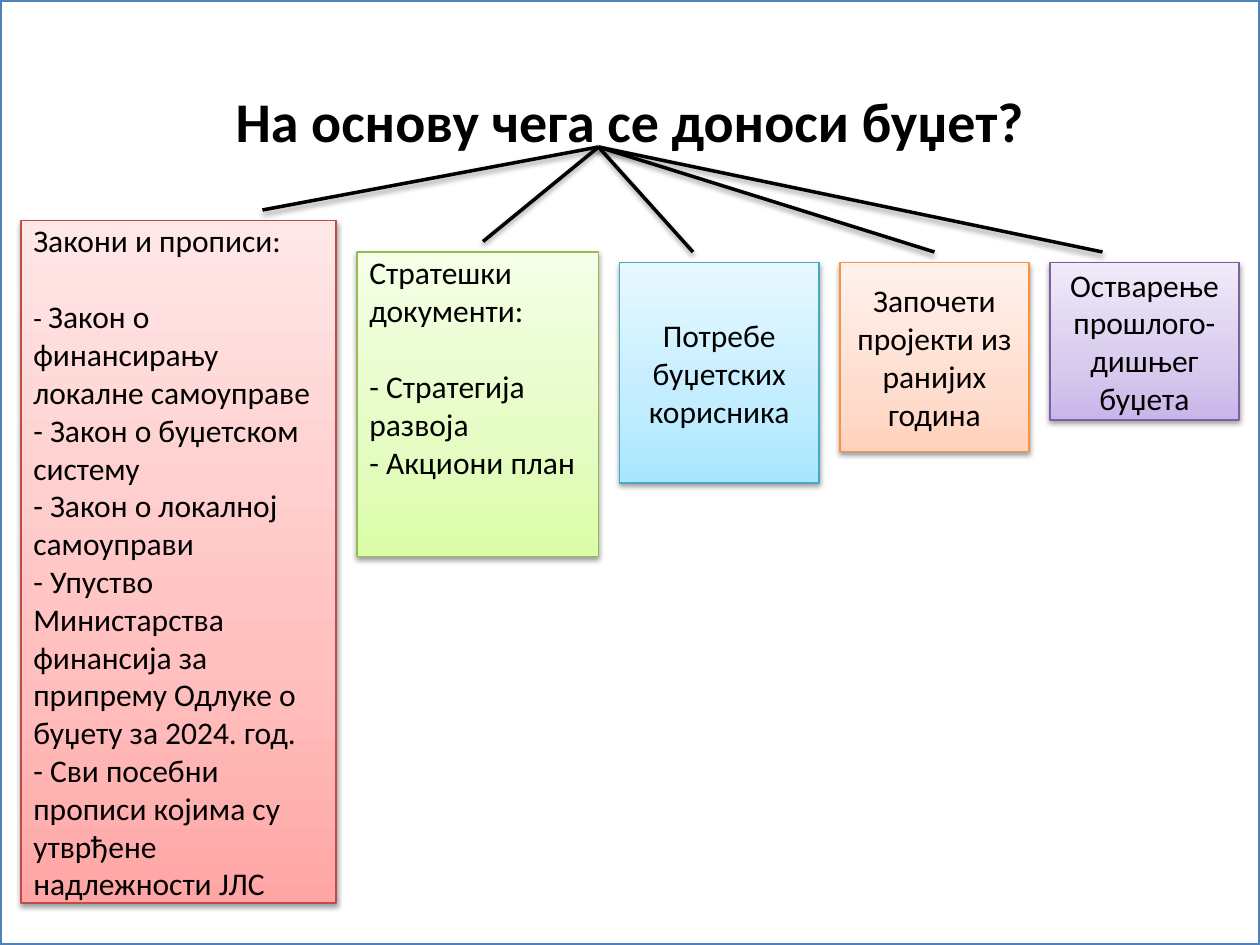
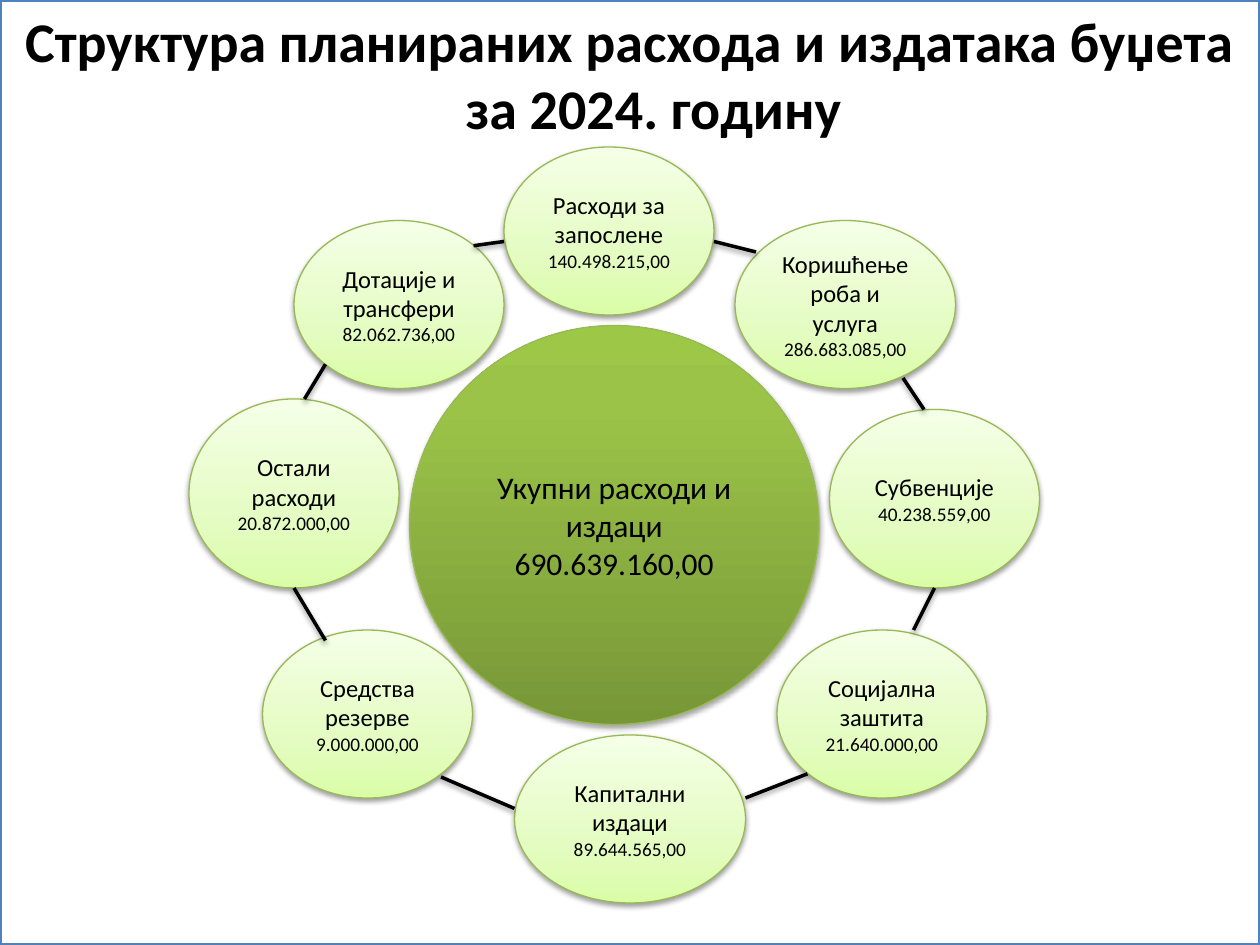
from dataclasses import dataclass

from lxml import etree
from pptx import Presentation
from pptx.dml.color import RGBColor
from pptx.enum.shapes import MSO_CONNECTOR, MSO_SHAPE
from pptx.enum.text import MSO_ANCHOR, PP_ALIGN
from pptx.oxml.ns import qn
from pptx.util import Emu, Pt

EMU_PER_PX = 7620  # 120 px to the inch
PAGE_WIDTH, PAGE_HEIGHT = 1200, 900
FONT = "Calibri"
RECTANGLE, ELLIPSE = MSO_SHAPE.RECTANGLE, MSO_SHAPE.OVAL
STRAIGHT = MSO_CONNECTOR.STRAIGHT
LEFT, CENTER = PP_ALIGN.LEFT, PP_ALIGN.CENTER
TOP, MIDDLE = MSO_ANCHOR.TOP, MSO_ANCHOR.MIDDLE

COLORS = {
    "paper": "FFFFFF", "ink": "000000", "frame": "4F81BD",
    "red": "BF4C48", "green": "98B955", "aqua": "46AAC5",
    "orange": "F69240", "purple": "7D60A0",
}
# Gradient stops from bottom to top: percent and colour
GRADIENTS = {
    "red": ((0, "FFA6A5"), (35, "FFC0BF"), (100, "FFE7E7")),
    "green": ((0, "DAFDA7"), (35, "E4FCC2"), (100, "F5FFE7")),
    "aqua": ((0, "A7E6FF"), (35, "C1EDFF"), (100, "E7F8FF")),
    "orange": ((0, "FFD2BD"), (35, "FFDED0"), (100, "FFF2ED")),
    "purple": ((0, "C9B5E8"), (35, "D8CBEE"), (100, "F0EAF9")),
    "total": ((0, "779737"), (80, "9BC348"), (100, "9DC746")),
}


@dataclass(frozen=True)
class Span:
    text: str
    size: int = 18


@dataclass(frozen=True)
class Area:
    left: int
    top: int
    width: int
    height: int


@dataclass(frozen=True)
class Source:
    """A basis of the budget: a heading, and items listed below it."""
    color: str
    top: int
    width: int
    height: int
    heading: str
    items: tuple[tuple[Span, ...], ...] = ()
    anchor: MSO_ANCHOR = MIDDLE
    inset_top: int = 6


@dataclass(frozen=True)
class Expense:
    area: Area
    name: str
    amount: str


@dataclass(frozen=True)
class Link:
    x1: int
    y1: int
    x2: int
    y2: int


SOURCES = (
    Source("red", 210, 300, 650, "Закони и прописи:", (
        (Span("- ", 16), Span("Закон о финансирању локалне самоуправе")),
        (Span("- Закон о буџетском систему"),),
        (Span("- Закон о локалној самоуправи"),),
        (Span("- Упуство Министарства финансија за припрему Одлуке о буџету за 2024. год."),),
        (Span("- Сви посебни прописи којима су утврђене надлежности ЈЛС"),),
    )),
    Source("green", 240, 230, 290, "Стратешки документи:", (
        (Span("- Стратегија развоја"),),
        (Span("- Акциони план"),),
    ), TOP, 1),
    Source("aqua", 250, 190, 210, "Потребе буџетских корисника"),
    Source("orange", 250, 180, 180, "Започети пројекти из ранијих година"),
    Source("purple", 250, 180, 150, "Остварење прошлого-дишњег буџета"),
)
SOURCE_GAP = 20
SOURCE_LINK_START = (570, 140)
SOURCE_LINK_ENDS = ((250, 200), (460, 230), (660, 240), (890, 240), (1050, 240))

TOTAL_AREA = Area(390, 310, 390, 380)
EXPENSES = (
    Expense(Area(480, 140, 200, 160), "Расходи за запослене", "140.498.215,00"),
    Expense(Area(700, 210, 210, 160), "Коришћење роба и услуга", "286.683.085,00"),
    Expense(Area(790, 390, 200, 170), "Субвенције", "40.238.559,00"),
    Expense(Area(740, 600, 200, 160), "Социјална заштита", "21.640.000,00"),
    Expense(Area(490, 700, 220, 160), "Капитални издаци", "89.644.565,00"),
    Expense(Area(280, 210, 200, 160), "Дотације и трансфери", "82.062.736,00"),
    Expense(Area(180, 380, 200, 180), "Остали расходи", "20.872.000,00"),
    Expense(Area(250, 600, 200, 160), "Средства резерве", "9.000.000,00"),
)
EXPENSE_LINKS = (
    Link(451, 234, 480, 230), Link(680, 230, 720, 240),
    Link(860, 360, 880, 390), Link(890, 560, 870, 600),
    Link(769, 737, 710, 760), Link(420, 740, 490, 770),
    Link(280, 560, 310, 610), Link(310, 347, 290, 380),
)


def px(length: int) -> Emu:
    return Emu(length * EMU_PER_PX)


def rgb(name: str) -> RGBColor:
    return RGBColor.from_string(COLORS[name])


def add_color(parent, value: str):
    return etree.SubElement(parent, qn("a:srgbClr"), val=value)


def fill_gradient(shape, stops) -> None:
    shape.fill.gradient()
    shape.fill.gradient_angle = 90
    stop_list = shape.element.spPr.find(qn("a:gradFill")).find(qn("a:gsLst"))
    for stop in list(stop_list):
        stop_list.remove(stop)
    for percent, value in stops:
        stop = etree.SubElement(stop_list, qn("a:gs"), pos=str(percent * 1000))
        add_color(stop, value)


def drop_shadow(shape, alpha: int = 38, distance: int = 20000) -> None:
    """Cast a soft shadow downwards; call it once the line is set."""
    properties = shape.element.spPr
    effects = properties.find(qn("a:effectLst"))
    if effects is None:
        effects = etree.SubElement(properties, qn("a:effectLst"))
    shadow = etree.SubElement(effects, qn("a:outerShdw"), blurRad="40000",
                              dist=str(distance), dir="5400000", rotWithShape="0")
    color = add_color(shadow, COLORS["ink"])
    etree.SubElement(color, qn("a:alpha"), val=str(alpha * 1000))


def write_text(shape, lines, *, align=CENTER, anchor=MIDDLE, bold=False,
               inset_top=6, gap_after_first=0) -> None:
    frame = shape.text_frame
    frame.word_wrap = True
    frame.vertical_anchor = anchor
    frame.margin_top = px(inset_top)
    for index, spans in enumerate(lines):
        para = frame.add_paragraph() if index else frame.paragraphs[0]
        para.alignment = align
        if index == 1 and gap_after_first:
            para.space_before = Pt(gap_after_first)
        for span in spans:
            run = para.add_run()
            run.text = span.text
            run.font.name = FONT
            run.font.size = Pt(span.size)
            run.font.bold = bold
            run.font.color.rgb = rgb("ink")


def add_box(page, kind, area: Area, line: str, line_width: float):
    box = page.shapes.add_shape(kind, px(area.left), px(area.top),
                                px(area.width), px(area.height))
    box.shadow.inherit = False
    box.line.color.rgb = rgb(line)
    box.line.width = Pt(line_width)
    return box


def add_gradient_box(page, kind, area: Area, line: str, gradient: str, **shadow):
    box = add_box(page, kind, area, line, 0.75)
    fill_gradient(box, GRADIENTS[gradient])
    drop_shadow(box, **shadow)
    return box


def add_link(page, link: Link) -> None:
    connector = page.shapes.add_connector(STRAIGHT, px(link.x1), px(link.y1),
                                          px(link.x2), px(link.y2))
    connector.line.color.rgb = rgb("ink")
    connector.line.width = Pt(2)
    drop_shadow(connector)


def add_page(deck, title: str, inset_top: int = 6):
    """Add a page with the shared frame, which also holds the title."""
    page = deck.slides.add_slide(deck.slide_layouts[6])
    frame = add_box(page, RECTANGLE, Area(0, 0, PAGE_WIDTH, PAGE_HEIGHT), "frame", 2)
    frame.fill.solid()
    frame.fill.fore_color.rgb = rgb("paper")
    write_text(frame, [(Span(title, 32),)], anchor=TOP, bold=True, inset_top=inset_top)
    hanging = px(45)
    properties = frame.text_frame.paragraphs[0]._p.get_or_add_pPr()
    properties.set("marL", str(hanging))
    properties.set("indent", str(-hanging))
    return page


def build_sources_page(deck) -> None:
    page = add_page(deck, "На основу чега се доноси буџет?", inset_top=82)
    left = SOURCE_GAP
    for source in SOURCES:
        area = Area(left, source.top, source.width, source.height)
        box = add_gradient_box(page, RECTANGLE, area, source.color, source.color)
        write_text(box, [(Span(source.heading),), *source.items],
                   align=LEFT if source.items else CENTER, anchor=source.anchor,
                   inset_top=source.inset_top, gap_after_first=22)
        left += source.width + SOURCE_GAP
    for end in SOURCE_LINK_ENDS:
        add_link(page, Link(*SOURCE_LINK_START, *end))


def build_expenses_page(deck) -> None:
    page = add_page(deck, "Структура планираних расхода и издатака буџета за 2024. годину")
    total = add_gradient_box(page, ELLIPSE, TOTAL_AREA, "green", "total",
                             alpha=35, distance=23000)
    write_text(total, [(Span("Укупни расходи и издаци 690.639.160,00"),)])
    for expense in EXPENSES:
        bubble = add_gradient_box(page, ELLIPSE, expense.area, "green", "green")
        write_text(bubble, [(Span(expense.name, 14),), (Span(expense.amount, 11),)])
    for link in EXPENSE_LINKS:
        add_link(page, link)


def main() -> None:
    deck = Presentation()
    deck.slide_width, deck.slide_height = px(PAGE_WIDTH), px(PAGE_HEIGHT)
    build_sources_page(deck)
    build_expenses_page(deck)
    deck.save("out.pptx")


if __name__ == "__main__":
    main()
